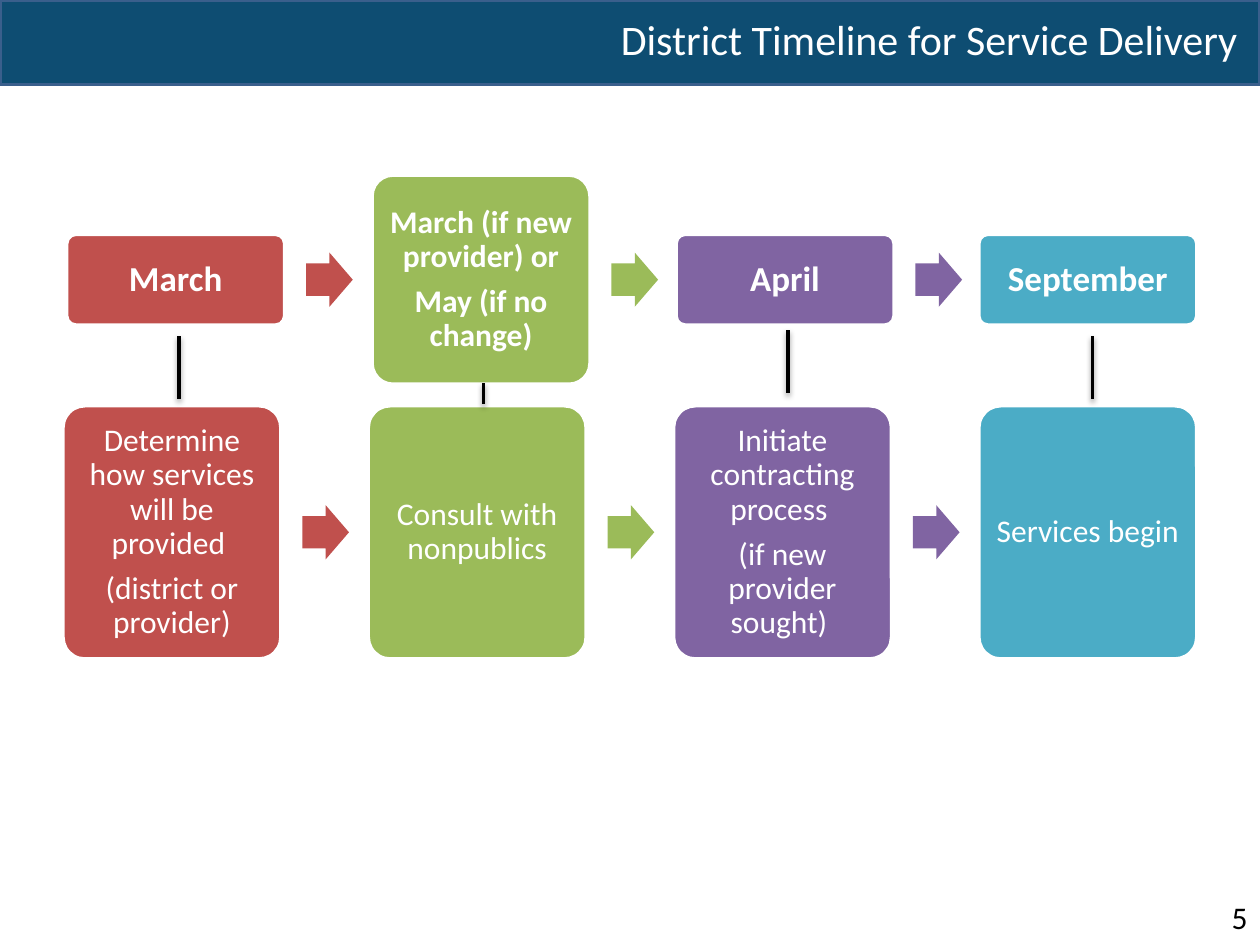
"""Build the district service timeline: four dates above four linked steps."""
import pptx
import pptx.dml.color
import pptx.enum.shapes
import pptx.enum.text
import pptx.oxml
import pptx.util

Inch, Pt = pptx.util.Inches, pptx.util.Pt
Kind = pptx.enum.shapes.MSO_SHAPE
Align = pptx.enum.text.PP_ALIGN
Middle = pptx.enum.text.MSO_ANCHOR.MIDDLE

theme = {
    "font": "Calibri", "head": 24, "date": 20, "body": 18, "line": 2,
    "bar": "0E4D72", "edge": "3A5F8C", "white": "FFFFFF", "black": "000000",
    "hues": ["C0504D", "9BBB59", "8064A2", "4BACC6"],
}
shade = (
    '<a:effectLst xmlns:a="http://schemas.openxmlformats.org/drawingml/2006/main">'
    '<a:outerShdw blurRad="40000" dist="20000" dir="5400000" rotWithShape="0">'
    '<a:srgbClr val="000000"><a:alpha val="38000"/></a:srgbClr>'
    '</a:outerShdw></a:effectLst>'
)

deck = pptx.Presentation()
deck.slide_width, deck.slide_height = Inch(10), Inch(7.5)
slide = deck.slides.add_slide(deck.slide_layouts[5])
shapes = slide.shapes


def write(frame, lines, size, hue, align=Align.CENTER, bold=False):
    frame.word_wrap = True
    frame.text = "\n".join(lines)
    for para in frame.paragraphs:
        para.alignment = align
        para.font.name = theme["font"]
        para.font.size = Pt(size)
        para.font.bold = bold
        para.font.color.rgb = pptx.dml.color.RGBColor.from_string(hue)


def draw(kind, left, top, width, height, fill, edge=None):
    shape = shapes.add_shape(kind, Inch(left), Inch(top), Inch(width), Inch(height))
    shape.shadow.inherit = False
    shape.fill.solid()
    shape.fill.fore_color.rgb = pptx.dml.color.RGBColor.from_string(fill)
    if edge:
        shape.line.color.rgb = pptx.dml.color.RGBColor.from_string(edge)
        shape.line.width = Pt(theme["line"])
    else:
        shape.line.fill.background()
    return shape


draw(Kind.RECTANGLE, 0, 0, 10, 0.67, theme["bar"], theme["edge"])
title = shapes.title
title.left, title.top, title.width, title.height = Inch(4.75), 0, Inch(5.25), Inch(0.62)
write(title.text_frame, ["District Timeline for Service Delivery"], theme["head"], theme["white"])
title.text_frame.vertical_anchor = Middle
title.text_frame.auto_size = pptx.enum.text.MSO_AUTO_SIZE.NONE
shapes.element.append(title.element)

page = shapes.add_textbox(Inch(9.33), Inch(7.08), Inch(0.67), Inch(0.4))
write(page.text_frame, ["5"], theme["body"], theme["black"], Align.RIGHT)

steps = [
    ["Determine how services will be provided ", "(district or provider)"],
    ["Consult with nonpublics"],
    ["Initiate contracting process ", "(if new provider sought) "],
    ["Services begin"],
]
dates = [["March"], ["March (if new provider) or", "May (if no change)"], ["April"], ["September"]]
left, pitch, wide = 0.5, 2.423, 1.73
rows = [
    (steps, 4.225, [2.01] * 4, [0] * 4, False),
    (dates, 2.22, [0.72, 1.66, 0.72, 0.72], [0.03, 0.03, 0.02, 0], True),
]

for cells, mid, highs, shifts, bold in rows:
    for col, (lines, high, shift, hue) in enumerate(zip(cells, highs, shifts, theme["hues"])):
        x = left + col * pitch + shift
        box = draw(Kind.ROUNDED_RECTANGLE, x, mid - high / 2, wide, high, hue, theme["white"])
        box.adjustments[0] = 0.1
        frame = box.text_frame
        short = high < 1
        write(frame, lines, theme["date" if short else "body"], theme["white"], bold=bold)
        frame.vertical_anchor = Middle
        pad = Inch(0.08 if short else 0.07)
        frame.margin_left = frame.margin_right = frame.margin_top = frame.margin_bottom = pad
        for para in frame.paragraphs:
            para.line_spacing = 0.9
            para.space_after = Pt(6.3)
        if col < 3:
            arrow = draw(Kind.RIGHT_ARROW, x + wide + 0.17, mid - 0.215, 0.37, 0.43, hue)
            arrow.adjustments[0] = 0.6

for col, (top, end) in enumerate([(2.67, 3.17), (3.04, 3.21), (2.62, 3.12), (2.67, 3.17)]):
    x = Inch(1.42 + col * 2.417)
    link = shapes.add_connector(
        pptx.enum.shapes.MSO_CONNECTOR.STRAIGHT, x, Inch(top), x, Inch(end))
    link.line.color.rgb = pptx.dml.color.RGBColor.from_string(theme["black"])
    link.line.width = Pt(theme["line"])
    link.element.spPr.append(pptx.oxml.parse_xml(shade))

deck.save("out.pptx")
